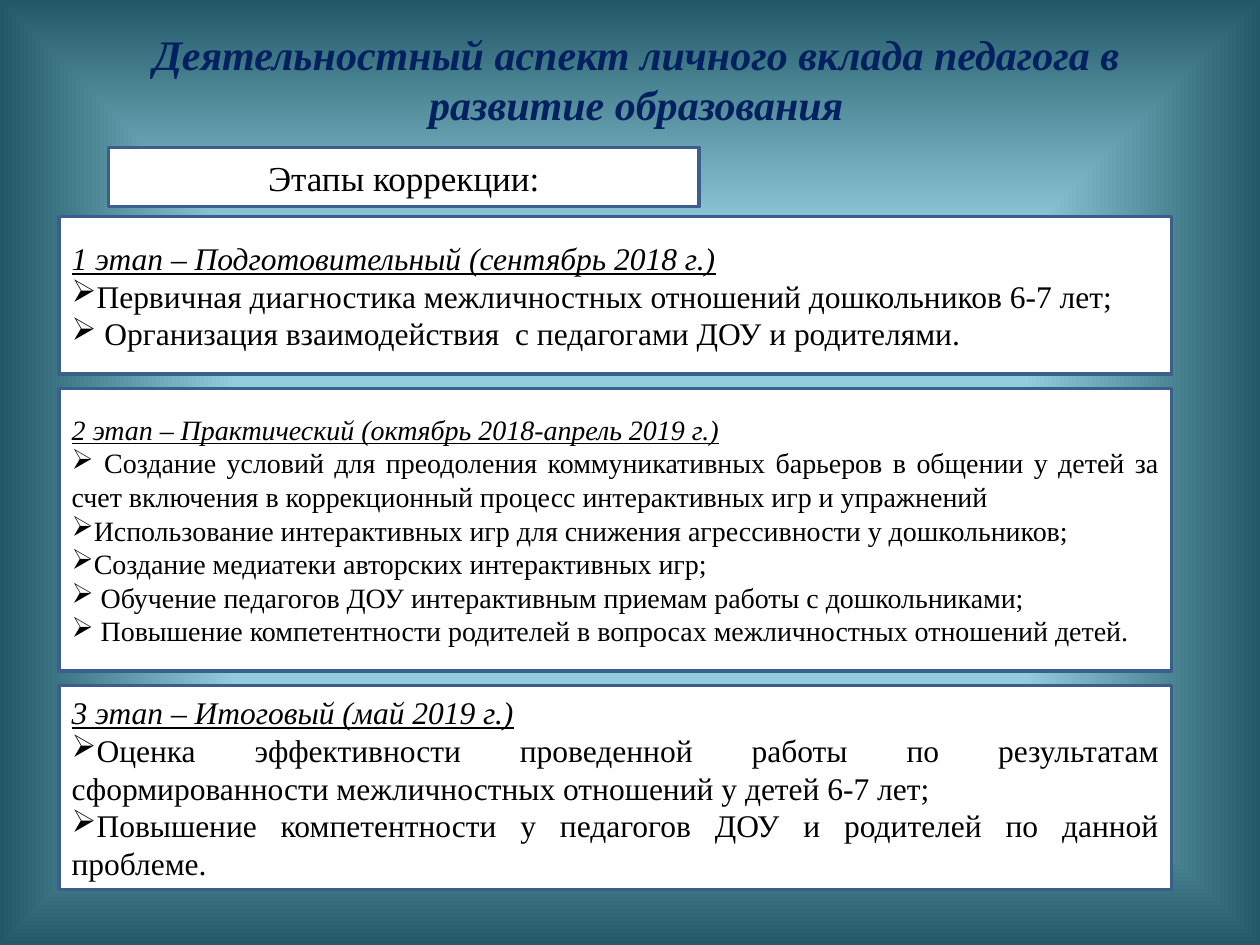
from pptx import Presentation, oxml, util as u
from pptx.dml import color
from pptx.enum import shapes, text
from pptx.oxml import ns

STAGES = [
    (12.5, 18, "1 этап – Подготовительный (сентябрь 2018 г.)", [
        "Первичная диагностика межличностных отношений дошкольников 6-7 лет;",
        " Организация взаимодействия  с педагогами ДОУ и родителями.",
    ]),
    (22.4, 16, "2 этап – Практический (октябрь 2018-апрель 2019 г.)", [
        " Создание условий для преодоления коммуникативных барьеров в общении у детей "
        "за счет включения в коррекционный процесс интерактивных игр и упражнений",
        "Использование интерактивных игр для снижения агрессивности у дошкольников;",
        "Создание медиатеки авторских интерактивных игр;",
        " Обучение педагогов ДОУ интерактивным приемам работы с дошкольниками;",
        " Повышение компетентности родителей в вопросах межличностных отношений детей.",
    ]),
    (16.2, 18, "3 этап – Итоговый (май 2019 г.)", [
        "Оценка эффективности проведенной работы по результатам сформированности "
        "межличностных отношений у детей 6-7 лет;",
        "Повышение компетентности у педагогов ДОУ и родителей по данной проблеме.",
    ]),
]


def rgb(code):
    return color.RGBColor.from_string(code)


class Deck:
    """Style and current slide; lengths are cells of a 100 by 75 grid."""
    FONT, INK, NAVY, PAPER, EDGE = "Times New Roman", "000000", "002060", "FFFFFF", "3A5F8C"
    CENTER, JUSTIFY = text.PP_ALIGN.CENTER, text.PP_ALIGN.JUSTIFY

    def __init__(self):
        self.prs = Presentation()
        self.prs.slide_width, self.prs.slide_height = u.Inches(10), u.Inches(7.5)
        self.cell = self.prs.slide_width / 100
        self.slide = self.prs.slides.add_slide(self.prs.slide_layouts[5])

    def grid(self, *cells):
        return [round(n * self.cell) for n in cells]

    def glow(self, *stops):
        """Fill the background with a gradient that runs from the centre to the edges."""
        self.slide.background.fill.gradient()
        old = next(self.slide.element.iter(ns.qn("a:gradFill")))
        marks = "".join(f'<a:gs pos="{at * 1000}"><a:srgbClr val="{code}"/></a:gs>'
                        for at, code in stops)
        new = oxml.parse_xml(
            f'<a:gradFill {ns.nsdecls("a")} rotWithShape="1"><a:gsLst>{marks}</a:gsLst>'
            '<a:path path="shape"><a:fillToRect l="50000" t="50000" r="50000" b="50000"/>'
            '</a:path></a:gradFill>')
        old.getparent().replace(old, new)

    def add_run(self, para, words, size, align, ink=INK, bold=False, italic=False, line=False):
        para.alignment = align
        run = para.add_run()
        run.text = words
        font = run.font
        font.name, font.size, font.color.rgb = self.FONT, u.Pt(size), rgb(ink)
        font.bold, font.italic, font.underline = bold, italic, line

    def title(self, words, *area):
        shape = self.slide.shapes.title
        shape.left, shape.top, shape.width, shape.height = self.grid(*area)
        frame = shape.text_frame
        frame.vertical_anchor = text.MSO_ANCHOR.MIDDLE
        self.add_run(frame.paragraphs[0], words, 24, self.CENTER, self.NAVY, True, True)

    def box(self, *area):
        shape = self.slide.shapes.add_shape(shapes.MSO_SHAPE.RECTANGLE, *self.grid(*area))
        shape.shadow.inherit = False
        shape.fill.solid()
        shape.fill.fore_color.rgb = rgb(self.PAPER)
        shape.line.color.rgb, shape.line.width = rgb(self.EDGE), u.Pt(2)
        frame = shape.text_frame
        frame.word_wrap, frame.vertical_anchor = True, text.MSO_ANCHOR.MIDDLE
        return frame

    def label(self, words, *area):
        self.add_run(self.box(*area).paragraphs[0], words, 20, self.CENTER)

    def stage(self, head, tasks, size, *area):
        frame = self.box(*area)
        self.add_run(frame.paragraphs[0], head, size, self.JUSTIFY, italic=True, line=True)
        for task in tasks:
            para = frame.add_paragraph()
            self.add_run(para, task, size, self.JUSTIFY)
            bullet = oxml.parse_xml(f'<a:buChar {ns.nsdecls("a")} char="➢"/>')
            para._p.get_or_add_pPr().append(bullet)


def main():
    deck = Deck()
    deck.glow((0, "93CDDD"), (50, "93CDDD"), (100, "215968"))
    deck.title("Деятельностный аспект личного вклада педагога в развитие образования",
               5.5, 0, 90, 12.5)
    deck.label("Этапы коррекции:", 8.6, 11.7, 46.9, 4.7)
    top, gap = 17.2, 1.15
    for high, size, head, tasks in STAGES:
        deck.stage(head, tasks, size, 4.7, top, 88.3, high)
        top += high + gap
    deck.prs.save("out.pptx")


if __name__ == "__main__":
    main()
